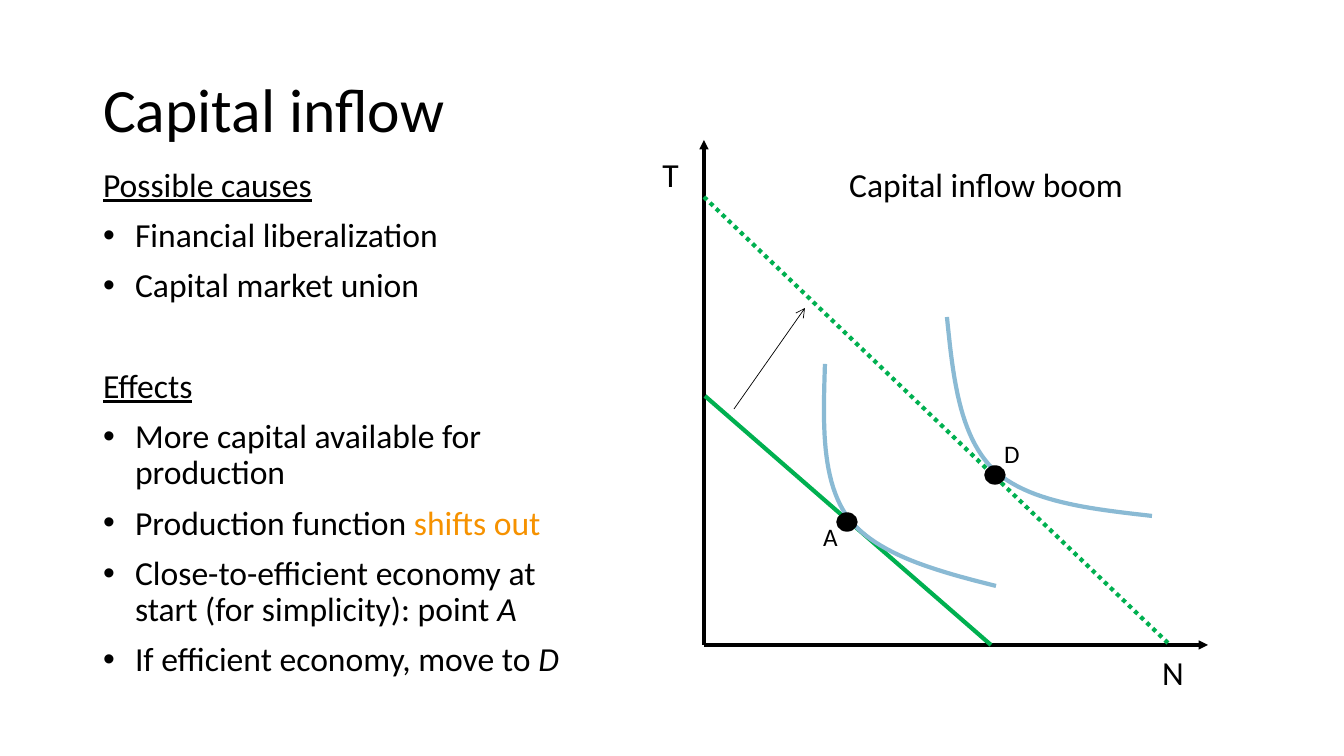
from dataclasses import dataclass

from lxml.etree import SubElement
from pptx import Presentation
from pptx.dml.color import RGBColor
from pptx.enum.dml import MSO_LINE
from pptx.enum.shapes import MSO_CONNECTOR, MSO_SHAPE
from pptx.enum.text import MSO_ANCHOR, MSO_AUTO_SIZE, PP_ALIGN
from pptx.oxml.ns import qn
from pptx.util import Emu, Pt

PX = 914400 / 100.8  # EMU in one px


@dataclass(frozen=True)
class Theme:
    font: str = "Calibri"
    ink: RGBColor = RGBColor(0, 0, 0)
    accent: RGBColor = RGBColor(0xF6, 0x92, 0x00)
    frontier: RGBColor = RGBColor(0x00, 0xB0, 0x50)
    indifference: RGBColor = RGBColor(0x8A, 0xBA, 0xD4)
    title: int = 44
    body: int = 24
    point: int = 18
    thin: float = 0.5
    outline: float = 1
    axis: float = 2.25
    curve: float = 3


THEME = Theme()

# Each bullet is a list of (text, style) pieces
SECTIONS = [
    ("Possible causes", [
        [("Financial liberalization", "")],
        [("Capital market union", "")],
    ]),
    ("Effects", [
        [("More capital available for production", "")],
        [("Production function ", ""), ("shifts out", "accent")],
        [("Close-to-efficient economy at start (for simplicity): point ", ""), ("A", "italic")],
        [("If efficient economy, move to ", ""), ("D", "italic")],
    ]),
]


def px(length):
    return Emu(round(length * PX))


def place(shape, left, top, width, height):
    shape.left, shape.top, shape.width, shape.height = map(px, (left, top, width, height))


def style_run(run, size, style=""):
    font = run.font
    font.name, font.size = THEME.font, Pt(size)
    font.color.rgb = THEME.accent if style == "accent" else THEME.ink
    font.italic = style == "italic"
    font.underline = style == "underline"


def fill_title(placeholder, text):
    place(placeholder, 93, 40, 1159, 146)
    frame = placeholder.text_frame
    frame.text = text
    frame.vertical_anchor = MSO_ANCHOR.MIDDLE
    frame.auto_size = MSO_AUTO_SIZE.NONE
    paragraph = frame.paragraphs[0]
    paragraph.alignment = PP_ALIGN.LEFT
    paragraph.line_spacing = 0.9
    style_run(paragraph.runs[0], THEME.title)


def fill_paragraph(paragraph, pieces, space_before, bullet):
    paragraph.line_spacing = 0.9
    paragraph.space_before = Pt(space_before)
    properties = paragraph._p.get_or_add_pPr()
    indent = px(32) if bullet else 0
    properties.set("marL", str(indent))
    properties.set("indent", str(-indent))
    if bullet:
        SubElement(properties, qn("a:buFont"), typeface="Arial")
        SubElement(properties, qn("a:buChar"), char="•")
    else:
        SubElement(properties, qn("a:buNone"))
    for text, style in pieces:
        run = paragraph.add_run()
        run.text = text
        style_run(run, THEME.body, style)


def fill_body(placeholder):
    place(placeholder, 93, 163, 489, 560)
    frame = placeholder.text_frame
    frame.auto_size = MSO_AUTO_SIZE.NONE
    paragraph = frame.paragraphs[0]
    space_before = 10
    for heading, bullets in SECTIONS:
        fill_paragraph(paragraph, [(heading, "underline")], space_before, False)
        for pieces in bullets:
            fill_paragraph(frame.add_paragraph(), pieces, 10, True)
        if heading != SECTIONS[-1][0]:
            paragraph = frame.add_paragraph()
            space_before = 46


def add_line(slide, start, end, color, width, head=None, dash=None):
    connector = slide.shapes.add_connector(
        MSO_CONNECTOR.STRAIGHT, *map(px, start + end))
    line = connector.line
    line.color.rgb, line.width = color, Pt(width)
    if dash:
        line.dash_style = dash
    if head:
        SubElement(line._get_or_add_ln(), qn("a:tailEnd"), type=head)
    SubElement(connector._element.spPr, qn("a:effectLst"))


def bezier_points(controls, steps=24):
    """Points along a chain of cubic segments that share their end points."""
    points = [controls[0]]
    for first in range(0, len(controls) - 1, 3):
        segment = controls[first:first + 4]
        for step in range(1, steps + 1):
            t = step / steps
            weights = ((1 - t) ** 3, 3 * t * (1 - t) ** 2, 3 * t * t * (1 - t), t ** 3)
            points.append(tuple(
                sum(weight * point[axis] for weight, point in zip(weights, segment))
                for axis in (0, 1)))
    return points


def add_curve(slide, controls):
    points = [(px(x), px(y)) for x, y in bezier_points(controls)]
    builder = slide.shapes.build_freeform(*points[0])
    builder.add_line_segments(points[1:], close=False)
    shape = builder.convert_to_shape()
    shape.shadow.inherit = False
    shape.fill.background()
    shape.line.color.rgb, shape.line.width = THEME.indifference, Pt(THEME.curve)


def add_dot(slide, left, top):
    dot = slide.shapes.add_shape(MSO_SHAPE.OVAL, *map(px, (left, top, 20, 18)))
    dot.shadow.inherit = False
    dot.fill.solid()
    dot.fill.fore_color.rgb = THEME.ink
    dot.line.color.rgb, dot.line.width = THEME.ink, Pt(THEME.outline)


def add_label(slide, text, box, size):
    label = slide.shapes.add_textbox(*map(px, box))
    frame = label.text_frame
    frame.text = text
    frame.word_wrap = False
    frame.auto_size = MSO_AUTO_SIZE.SHAPE_TO_FIT_TEXT
    paragraph = frame.paragraphs[0]
    paragraph.alignment = PP_ALIGN.CENTER
    style_run(paragraph.runs[0], size)


def draw_diagram(slide):
    # Axes
    origin = (704, 645)
    for tip in ((704, 140), (1208, 645)):
        add_line(slide, origin, tip, THEME.ink, THEME.axis, head="triangle")

    # Production frontiers before and after the inflow, with indifference curves
    add_line(slide, (705, 396), (991, 645), THEME.frontier, THEME.curve)
    add_curve(slide, [(947, 317), (953, 376), (959, 435), (993, 469),
                      (1027, 502), (1090, 509), (1152, 516)])
    add_line(slide, (704, 197), (1170, 645), THEME.frontier, THEME.curve,
             dash=MSO_LINE.ROUND_DOT)
    add_curve(slide, [(825, 364), (823, 423), (821, 482), (849, 519),
                      (878, 555), (936, 571), (996, 586)])

    # Points A and D, and the shift between the frontiers
    add_dot(slide, 837, 513)
    add_dot(slide, 985, 466)
    add_line(slide, (734, 409), (805, 308), THEME.ink, THEME.thin, head="arrow")

    # Labels
    add_label(slide, "T", (652, 149, 37, 50), THEME.body)
    add_label(slide, "N", (1152, 647, 42, 50), THEME.body)
    add_label(slide, "D", (994, 433, 36, 40), THEME.point)
    add_label(slide, "A", (813, 516, 35, 40), THEME.point)
    add_label(slide, "Capital inflow boom", (838, 159, 296, 50), THEME.body)


def main():
    presentation = Presentation()
    presentation.slide_width, presentation.slide_height = px(1344), px(756)
    slide = presentation.slides.add_slide(presentation.slide_layouts[1])
    fill_title(slide.shapes.title, "Capital inflow")
    fill_body(slide.placeholders[1])
    draw_diagram(slide)
    presentation.save("out.pptx")


if __name__ == "__main__":
    main()
